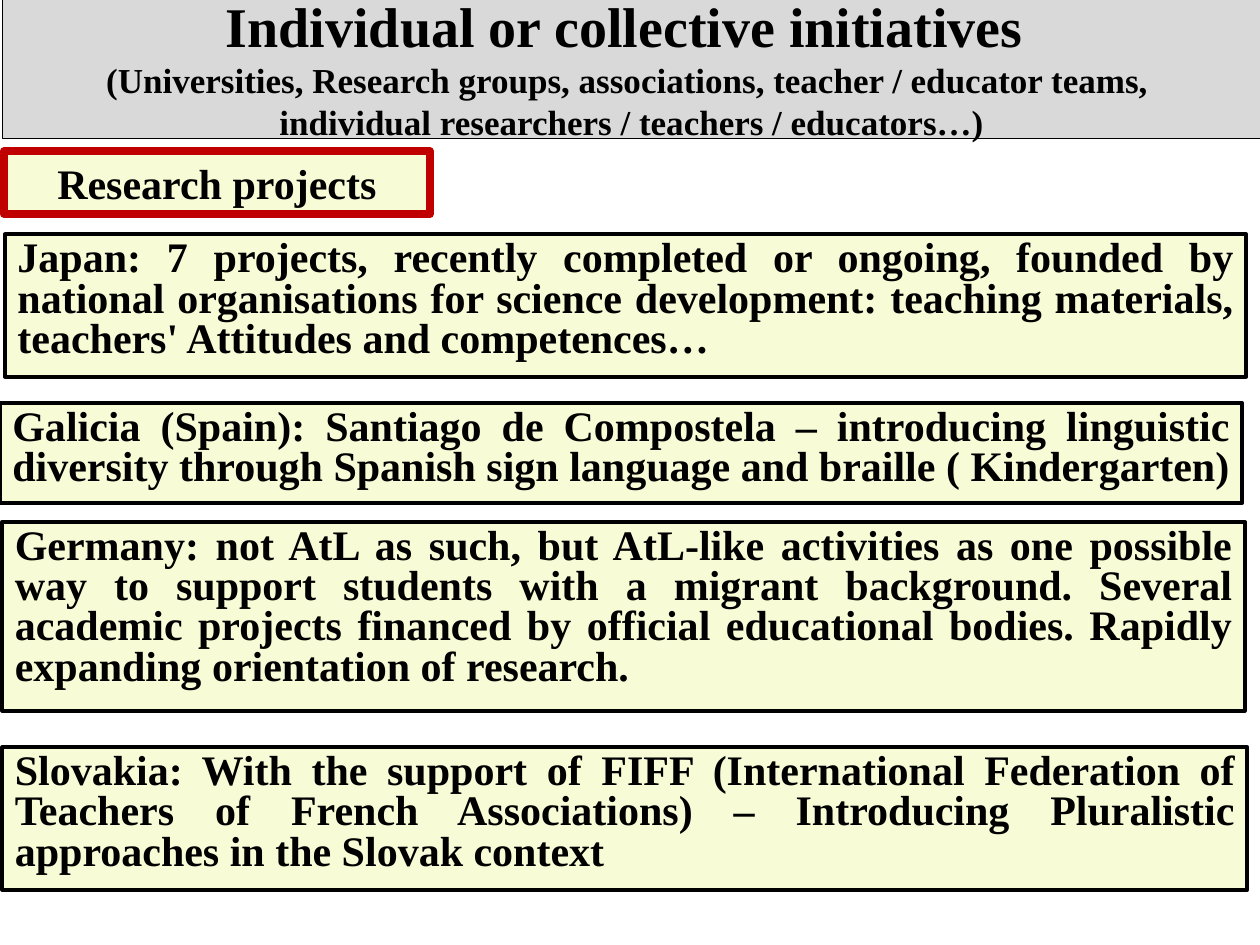
from pptx import Presentation
from pptx.dml.color import RGBColor
from pptx.enum.shapes import MSO_SHAPE
from pptx.enum.text import MSO_ANCHOR, MSO_AUTO_SIZE, PP_ALIGN
from pptx.util import Pt

# Content; a vertical tab is a line break
TITLE = "Individual or collective initiatives \v"
SUBTITLE = ("(Universities, Research groups, associations, teacher / educator teams, \v"
            "individual researchers / teachers / educators…)")
HEADING = "Research projects"

# Project boxes: (left, top, width, height) in points, text
PROJECTS = [
    ((2.9, 133.9, 709.2, 81.4),
     "Japan: 7 projects, recently completed or ongoing, founded by national "
     "organisations for science development: teaching materials, teachers' "
     "Attitudes and competences…"),
    ((0, 230.4, 709.9, 56.9),
     "Galicia (Spain): Santiago de Compostela – introducing linguistic diversity "
     "through Spanish sign language and braille ( Kindergarten)"),
    ((1.4, 298.1, 709.9, 108),
     "Germany: not AtL as such, but AtL-like activities as one possible way to "
     "support students with a migrant background. Several academic projects "
     "financed by official educational bodies. Rapidly expanding orientation of "
     "research."),
    ((1.4, 427, 711.4, 81.4),
     "Slovakia: With the support of FIFF (International Federation of Teachers of "
     "French Associations) – Introducing Pluralistic approaches in the Slovak "
     "context"),
]

THEME = {
    "font": "Times New Roman",
    "title": 32, "subtitle": 20, "body": 24,
    "ink": RGBColor(0, 0, 0),
    "banner": RGBColor(0xD9, 0xD9, 0xD9),
    "cream": RGBColor(0xF8, 0xFC, 0xD6),
    "red": RGBColor(0xC0, 0, 0),
}


def add_box(slide, bounds, fill, line, line_width, text, align, anchor=MSO_ANCHOR.TOP):
    """Add a filled, outlined rectangle and return its shape and paragraph."""
    shape = slide.shapes.add_shape(MSO_SHAPE.RECTANGLE, *map(Pt, bounds))
    shape.shadow.inherit = False
    shape.fill.solid()
    shape.fill.fore_color.rgb = fill
    shape.line.color.rgb = line
    shape.line.width = Pt(line_width)
    frame = shape.text_frame
    frame.word_wrap = True
    frame.vertical_anchor = anchor
    paragraph = frame.paragraphs[0]
    paragraph.text = text
    paragraph.alignment = align
    font = paragraph.font
    font.name, font.size, font.bold = THEME["font"], Pt(THEME["body"]), True
    font.color.rgb = THEME["ink"]
    return shape, paragraph


presentation = Presentation()
presentation.slide_width, presentation.slide_height = Pt(720), Pt(540)
slide = presentation.slides.add_slide(presentation.slide_layouts[6])

# Title banner
_, paragraph = add_box(slide, (1.4, -2.2, 719.3, 81.4), THEME["banner"], THEME["ink"],
                       0.75, "", PP_ALIGN.CENTER, MSO_ANCHOR.MIDDLE)
for text, size in ((TITLE, THEME["title"]), (SUBTITLE, THEME["subtitle"])):
    for index, part in enumerate(text.split("\v")):
        if index:
            paragraph.add_line_break()
        if part:
            run = paragraph.add_run()
            run.text = part
            run.font.size = Pt(size)

# Section heading
heading, _ = add_box(slide, (2.2, 86.4, 243.4, 36), THEME["cream"], THEME["red"],
                     4.5, HEADING, PP_ALIGN.CENTER)
heading.text_frame.auto_size = MSO_AUTO_SIZE.SHAPE_TO_FIT_TEXT

# Project boxes
for bounds, text in PROJECTS:
    _, paragraph = add_box(slide, bounds, THEME["cream"], THEME["ink"],
                           2.25, text, PP_ALIGN.JUSTIFY)
    paragraph.line_spacing = 0.8

presentation.save("out.pptx")
